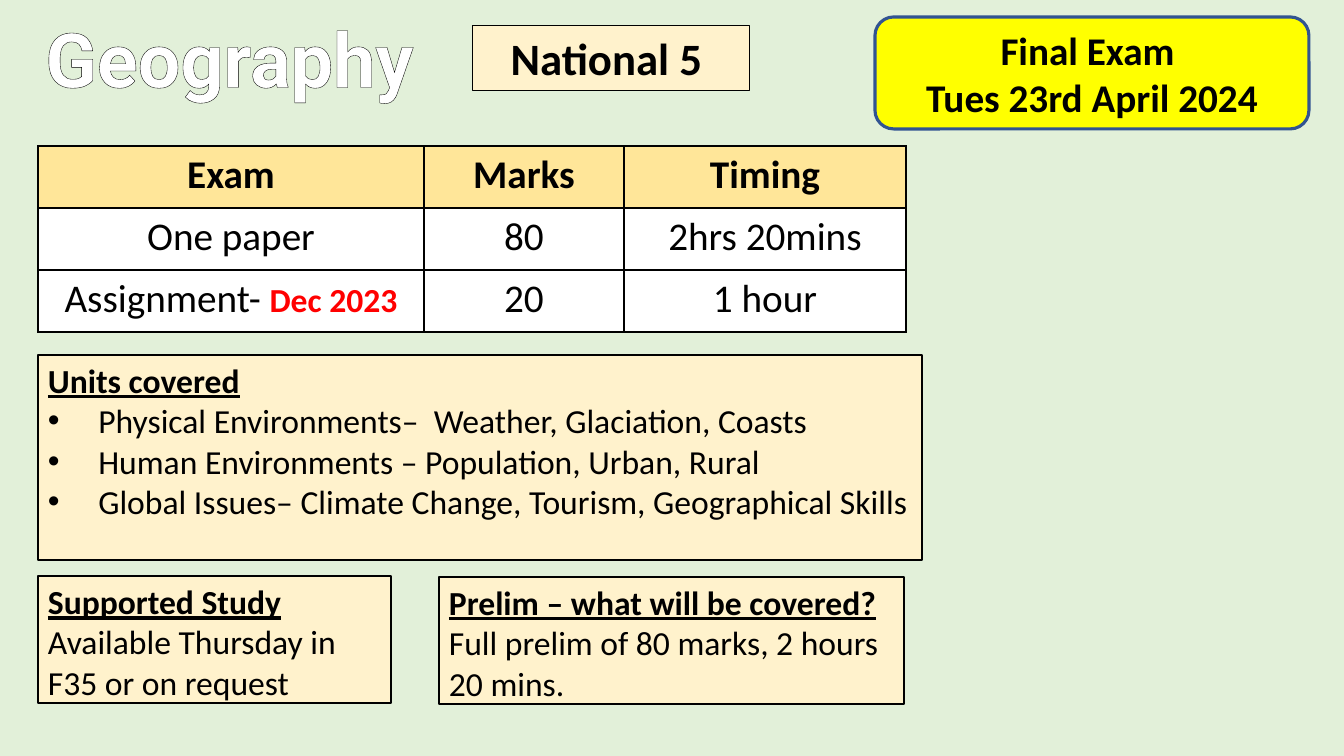
import pptx
import pptx.dml.color
import pptx.enum.shapes
import pptx.enum.text
import pptx.oxml
import pptx.oxml.ns
import pptx.util

PX = 914400 / 100.8  # EMU in one px
RGB = pptx.dml.color.RGBColor
GREEN = RGB(0xE2, 0xF0, 0xD9)
CREAM = RGB(0xFF, 0xF2, 0xCC)
GOLD = RGB(0xFF, 0xE6, 0x99)
YELLOW = RGB(0xFF, 0xFF, 0x00)
NAVY = RGB(0x32, 0x54, 0x91)
RED = RGB(0xFF, 0x00, 0x00)
BLACK = RGB(0, 0, 0)
WHITE = RGB(0xFF, 0xFF, 0xFF)
RECT = pptx.enum.shapes.MSO_SHAPE.RECTANGLE
ROUNDED = pptx.enum.shapes.MSO_SHAPE.ROUNDED_RECTANGLE
LEFT = pptx.enum.text.PP_ALIGN.LEFT
CENTER = pptx.enum.text.PP_ALIGN.CENTER
TOP = pptx.enum.text.MSO_ANCHOR.TOP
MIDDLE = pptx.enum.text.MSO_ANCHOR.MIDDLE


def px(*lengths):
    return [round(length * PX) for length in lengths]


def line_xml(tag, points):
    """Black outline element, for text outlines and cell borders."""
    namespace = pptx.oxml.ns.nsdecls("a")
    return pptx.oxml.parse_xml(
        f'<a:{tag} {namespace} w="{pptx.util.Pt(points)}"><a:solidFill>'
        f'<a:srgbClr val="{BLACK}"/></a:solidFill></a:{tag}>')


def set_font(font, size, bold=False, color=BLACK, name="Calibri"):
    font.name = name
    font.size = pptx.util.Pt(size)
    font.bold = bold
    font.color.rgb = color


def add_line(frame, text, size, bold=False, align=LEFT):
    """Write into the empty first paragraph, or into a new one."""
    paragraph = frame.paragraphs[0]
    if paragraph.runs:
        paragraph = frame.add_paragraph()
    paragraph.add_run().text = text
    paragraph.alignment = align
    set_font(paragraph.font, size, bold)
    return paragraph


def add_bullet(paragraph, indent):
    properties = paragraph._p.get_or_add_pPr()
    properties.set("marL", str(indent))
    properties.set("indent", str(-indent))
    namespace = pptx.oxml.ns.nsdecls("a")
    marks = [f'<a:buFont {namespace} typeface="Arial"/>',
             f'<a:buChar {namespace} char="•"/>']
    for position, mark in enumerate(marks):
        properties.insert(position, pptx.oxml.parse_xml(mark))


def add_panel(slide, box, kind=RECT, fill=CREAM, line=BLACK, width=1, anchor=TOP):
    panel = slide.shapes.add_shape(kind, *px(*box))
    panel.shadow.inherit = False
    panel.fill.solid()
    panel.fill.fore_color.rgb = fill
    panel.line.color.rgb = line
    panel.line.width = pptx.util.Pt(width)
    frame = panel.text_frame
    frame.word_wrap = True
    frame.vertical_anchor = anchor
    return frame


def add_notes_panel(slide, box, heading, lines, bulleted=False):
    """Cream panel with an underlined heading over plain or bulleted lines."""
    frame = add_panel(slide, box)
    add_line(frame, heading, 24, bold=True).font.underline = True
    for text in lines:
        paragraph = add_line(frame, text, 24)
        if bulleted:
            add_bullet(paragraph, pptx.util.Inches(0.5))


def add_subject(slide, box, text):
    """Subject name in outlined letters."""
    frame = slide.shapes.add_textbox(*px(*box)).text_frame
    frame.word_wrap = True
    frame.paragraphs[0].alignment = CENTER
    run = frame.paragraphs[0].add_run()
    run.text = text
    set_font(run.font, 54, True, WHITE, "Roboto")
    run._r.get_or_add_rPr().insert(0, line_xml("ln", 2.25))


def add_exam_table(slide, left, top, widths, row_height, rows):
    box = px(left, top, sum(widths), row_height * len(rows))
    table = slide.shapes.add_table(len(rows), len(widths), *box).table
    for column, width in zip(table.columns, px(*widths)):
        column.width = width
    for r, texts in enumerate(rows):
        table.rows[r].height = px(row_height)[0]
        for c, text in enumerate(texts):
            cell = table.cell(r, c)
            for side in ("lnL", "lnR", "lnT", "lnB"):
                cell._tc.get_or_add_tcPr().append(line_xml(side, 1))
            cell.fill.solid()
            cell.fill.fore_color.rgb = WHITE if r else GOLD
            add_line(cell.text_frame, text, 28, bold=r == 0, align=CENTER)
    return table


def main():
    deck = pptx.Presentation()
    deck.slide_width, deck.slide_height = px(1344, 756)
    slide = deck.slides.add_slide(deck.slide_layouts[6])
    slide.background.fill.solid()
    slide.background.fill.fore_color.rgb = GREEN

    # Header: level, subject and exam date
    level = add_panel(slide, (473, 26, 277, 65), width=0.75)
    add_line(level, "National 5 ", 32, bold=True, align=CENTER)
    add_subject(slide, (-52, 7, 563, 102), "Geography")
    exam_date = add_panel(slide, (875, 17, 434, 112), ROUNDED, YELLOW, NAVY, 2.25, MIDDLE)
    for text in ("Final Exam ", "Tues 23rd April 2024"):
        add_line(exam_date, text, 28, bold=True, align=CENTER)

    # Exam parts, with the assignment's date in red
    exams = add_exam_table(slide, 38, 146, (386, 200, 282), 62, [
        ("Exam", "Marks", "Timing"),
        ("One paper", "80", "2hrs 20mins"),
        ("Assignment- ", "20", "1 hour"),
    ])
    due = exams.cell(2, 0).text_frame.paragraphs[0].add_run()
    due.text = "Dec 2023"
    set_font(due.font, 24, True, RED)

    # Course notes
    add_notes_panel(slide, (38, 355, 884, 205), "Units covered", [
        "Physical Environments–  Weather, Glaciation, Coasts",
        "Human Environments – Population, Urban, Rural",
        "Global Issues– Climate Change, Tourism, Geographical Skills",
    ], bulleted=True)
    add_notes_panel(slide, (38, 576, 353, 127), "Supported Study",
                    ["Available Thursday in F35 or on request"])
    add_notes_panel(slide, (439, 577, 465, 127), "Prelim – what will be covered?",
                    ["Full prelim of 80 marks, 2 hours 20 mins."])

    deck.save("out.pptx")


if __name__ == "__main__":
    main()
